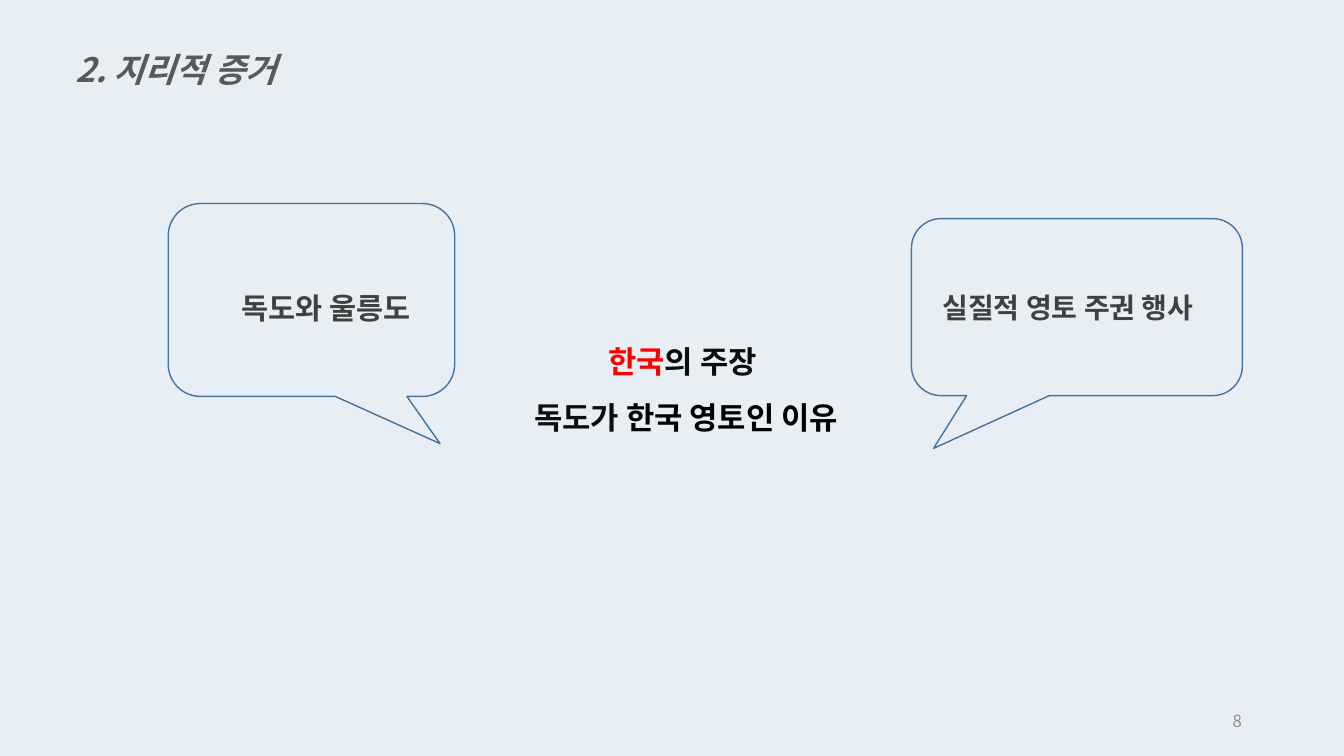
from lxml import etree
from pptx import Presentation
from pptx.dml.color import RGBColor
from pptx.enum import shapes, text
from pptx.oxml import ns
from pptx.util import Cm, Pt

FONT = "Noto Sans CJK KR"
COLORS = {
    "background": "E8EFF4",
    "outline": "43739E",
    "title": "595959",
    "label": "404040",
    "number": "8C8C8C",
    "accent": "FF0000",
    "dark": "0D0D0D",
    "black": "000000",
}
LEFT, CENTER, RIGHT = text.PP_ALIGN.LEFT, text.PP_ALIGN.CENTER, text.PP_ALIGN.RIGHT
TOP, MIDDLE = text.MSO_ANCHOR.TOP, text.MSO_ANCHOR.MIDDLE

CALLOUTS = [
    ((4.24, 5.13, 7.22, 4.86), (0.449, 0.745, 0.167)),
    ((22.97, 5.51, 8.34, 4.46), (-0.433, 0.798, 0.167)),
]
CLAIM = [
    [("한국", "accent"), ("의 주장 ", "dark")],
    [("독도가 ", "dark"), ("한국 영토인 이유", "black")],
]
TEXTS = [
    ((12.5, 8.05, 9.58, 2.9), CLAIM, 22, CENTER, TOP, 1.5, True, False),
    ((23.5, 6.78, 8.05, 1.37), [[("실질적 영토 주권 행사", "label")]],
     20, LEFT, TOP, 1.5, True, False),
    ((2.36, 6.73, 8.23, 1.42), [[("독도와 울릉도", "label")]],
     21, RIGHT, TOP, 1.5, True, False),
    ((23.93, 17.65, 7.62, 1.02), [[("8", "number")]],
     12, RIGHT, MIDDLE, 1.0, False, False),
    ((1.65, 0.61, 15.24, 2.97), [[("2. 지리적 증거", "title")]],
     24, LEFT, TOP, 1.5, True, True),
]


def color(name):
    return RGBColor.from_string(COLORS[name])


def add_callout(page, place, adjustments):
    callout = page.shapes.add_shape(
        shapes.MSO_SHAPE.ROUNDED_RECTANGULAR_CALLOUT, *map(Cm, place))
    for index, value in enumerate(adjustments):
        callout.adjustments[index] = value
    callout.shadow.inherit = False
    callout.fill.background()
    callout.line.color.rgb = color("outline")
    callout.line.width = Pt(1)


def add_text(page, place, lines, size, align, anchor, spacing, bold, italic):
    frame = page.shapes.add_textbox(*map(Cm, place)).text_frame
    frame.word_wrap = True
    frame.vertical_anchor = anchor
    for index, spans in enumerate(lines):
        para = frame.add_paragraph() if index else frame.paragraphs[0]
        para.alignment = align
        para.line_spacing = spacing
        para.font.name = FONT
        para.font.size = Pt(size)
        para.font.bold = bold
        para.font.italic = italic
        east_asian = etree.SubElement(para._p.pPr.find(ns.qn("a:defRPr")), ns.qn("a:ea"))
        east_asian.set("typeface", FONT)
        for words, shade in spans:
            span = para.add_run()
            span.text = words
            span.font.color.rgb = color(shade)


def main():
    deck = Presentation()
    deck.slide_width, deck.slide_height = Cm(33.87), Cm(19.05)
    page = deck.slides.add_slide(deck.slide_layouts[6])
    page.background.fill.solid()
    page.background.fill.fore_color.rgb = color("background")
    for callout in CALLOUTS:
        add_callout(page, *callout)
    for block in TEXTS:
        add_text(page, *block)
    deck.save("out.pptx")


if __name__ == "__main__":
    main()
